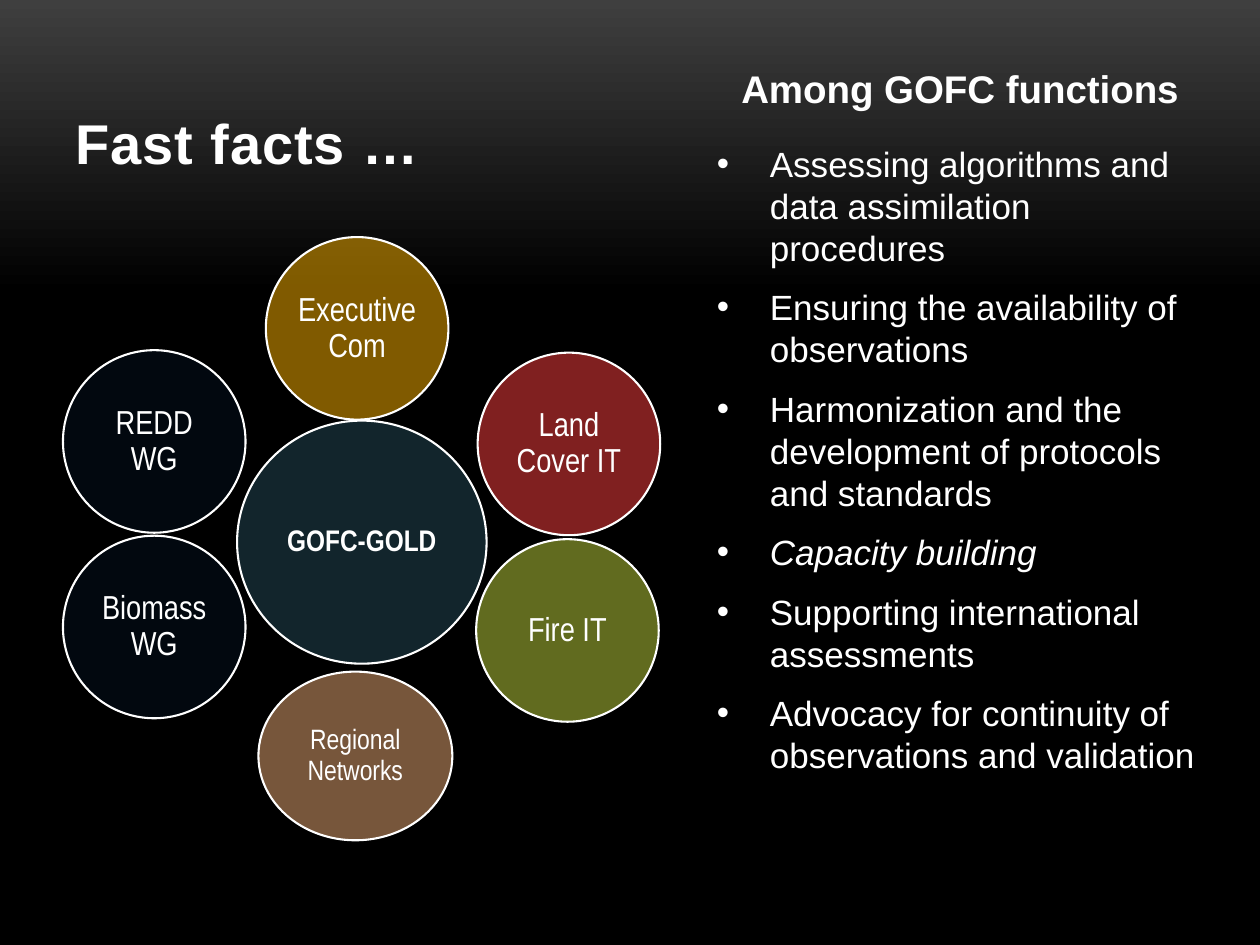
from lxml.etree import SubElement
from pptx import Presentation
from pptx.dml.color import RGBColor as Rgb
from pptx.enum.shapes import MSO_SHAPE as Kind
from pptx.enum.text import MSO_ANCHOR as Anchor, MSO_AUTO_SIZE as Auto, PP_ALIGN as Align
from pptx.oxml.ns import qn
from pptx.util import Cm, Pt

COLORS = {
    "white": "FFFFFF", "black": "000000", "gray": "3F3F3F",
    "teal": "244A58", "tan": "EEAC77", "red": "FF4040",
    "lime": "C2D63E", "navy": "04111E", "gold": "FFB400",
}
SIDE = 3.68
DISCS = [
    ("GOFC-GOLD", "teal", 3.51, 3.7, 5.03, 4.9, 17, True),
    ("Regional Networks", "tan", 3.94, 8.76, 3.91, 3.4, 16, False),
    ("Land Cover IT", "red", 8.36, 2.33, SIDE, SIDE, 19, False),
    ("Fire IT", "lime", 8.33, 6.09, SIDE, SIDE, 19, False),
    ("Biomass WG", "navy", 0, 6.02, SIDE, SIDE, 19, False),
    ("REDD WG", "navy", 0, 2.28, SIDE, SIDE, 19, False),
    ("Executive Com", "gold", 4.09, 0, SIDE, SIDE, 19, False),
]
TASKS = [
    "Assessing algorithms and data assimilation procedures",
    "Ensuring the availability of observations",
    "Harmonization and the development of protocols and standards",
    "Capacity building",
    "Supporting international assessments",
    "Advocacy for continuity of observations and validation",
]


def color(name):
    return Rgb.from_string(COLORS[name])


def write(para, text, size, face="Arial", bold=False, italic=False,
          align=Align.LEFT, line=1.0, before=0, after=0, track=0, bullet=False):
    para.alignment = align
    para.line_spacing = line
    para.space_before, para.space_after = Pt(before), Pt(after)
    if bullet:
        props = para._p.get_or_add_pPr()
        props.set("marL", str(Cm(1.07)))
        props.set("indent", str(-Cm(1.07)))
        SubElement(props, qn("a:buFont")).set("typeface", "Arial")
        SubElement(props, qn("a:buChar")).set("char", "•")
    run = para.add_run()
    run.text = text
    font = run.font
    font.name, font.size, font.bold, font.italic = face, Pt(size), bold, italic
    font.color.rgb = color("white")
    if track:
        font._element.set("spc", str(track))


def paint_back(slide):
    fill = slide.background.fill
    fill.gradient()
    fill.gradient_angle = 270
    for stop, (place, name) in zip(fill.gradient_stops, [(0, "gray"), (0.31, "black")]):
        stop.position = place
        stop.color.rgb = color(name)


def add_title(slide, x, y, w, h):
    title = slide.shapes.title
    title.left, title.top, title.width, title.height = Cm(x), Cm(y), Cm(w), Cm(h)
    frame = title.text_frame
    frame.auto_size = Auto.NONE
    frame.vertical_anchor = Anchor.BOTTOM
    write(frame.paragraphs[0], "Fast facts …", 32, bold=True, line=Pt(24), after=6, track=50)


def add_disc(slide, text, tint, x, y, w, h, size, bold):
    disc = slide.shapes.add_shape(Kind.OVAL, Cm(x), Cm(y), Cm(w), Cm(h))
    disc.shadow.inherit = False
    disc.fill.solid()
    disc.fill.fore_color.rgb = color(tint)
    shade = disc.element.spPr.find(qn("a:solidFill")).find(qn("a:srgbClr"))
    SubElement(shade, qn("a:alpha")).set("val", "50000")
    disc.line.color.rgb = color("white")
    disc.line.width = Pt(1.2)
    frame = disc.text_frame
    frame.word_wrap = True
    frame.vertical_anchor = Anchor.MIDDLE
    frame.margin_left = frame.margin_right = Cm(0.07)
    frame.margin_top = frame.margin_bottom = Cm(0.07)
    write(frame.paragraphs[0], text, size, face="Arial Narrow", bold=bold,
          align=Align.CENTER, line=0.9)


def add_wheel(slide, x, y):
    for text, tint, dx, dy, w, h, size, bold in DISCS:
        add_disc(slide, text, tint, x + dx, y + dy, w, h, size, bold)


def add_tasks(slide, x, y, w, h):
    frame = slide.shapes.add_textbox(Cm(x), Cm(y), Cm(w), Cm(h)).text_frame
    frame.word_wrap = True
    frame.margin_top = Cm(1.24)
    write(frame.paragraphs[0], "Among GOFC functions", 22, bold=True, align=Align.CENTER)
    for i, task in enumerate(TASKS):
        write(frame.add_paragraph(), task, 20, italic=task == "Capacity building",
              line=Pt(24), before=10 if i else 17.5, bullet=True)


def main():
    deck = Presentation()
    deck.slide_width, deck.slide_height = Cm(25.4), Cm(19.05)
    slide = deck.slides.add_slide(deck.slide_layouts[5])
    paint_back(slide)
    add_title(slide, 1.27, 0.76, 12.93, 2.92)
    add_wheel(slide, 1.27, 4.78)
    add_tasks(slide, 14.2, 0.08, 10.31, 16.28)
    deck.save("out.pptx")


if __name__ == "__main__":
    main()
